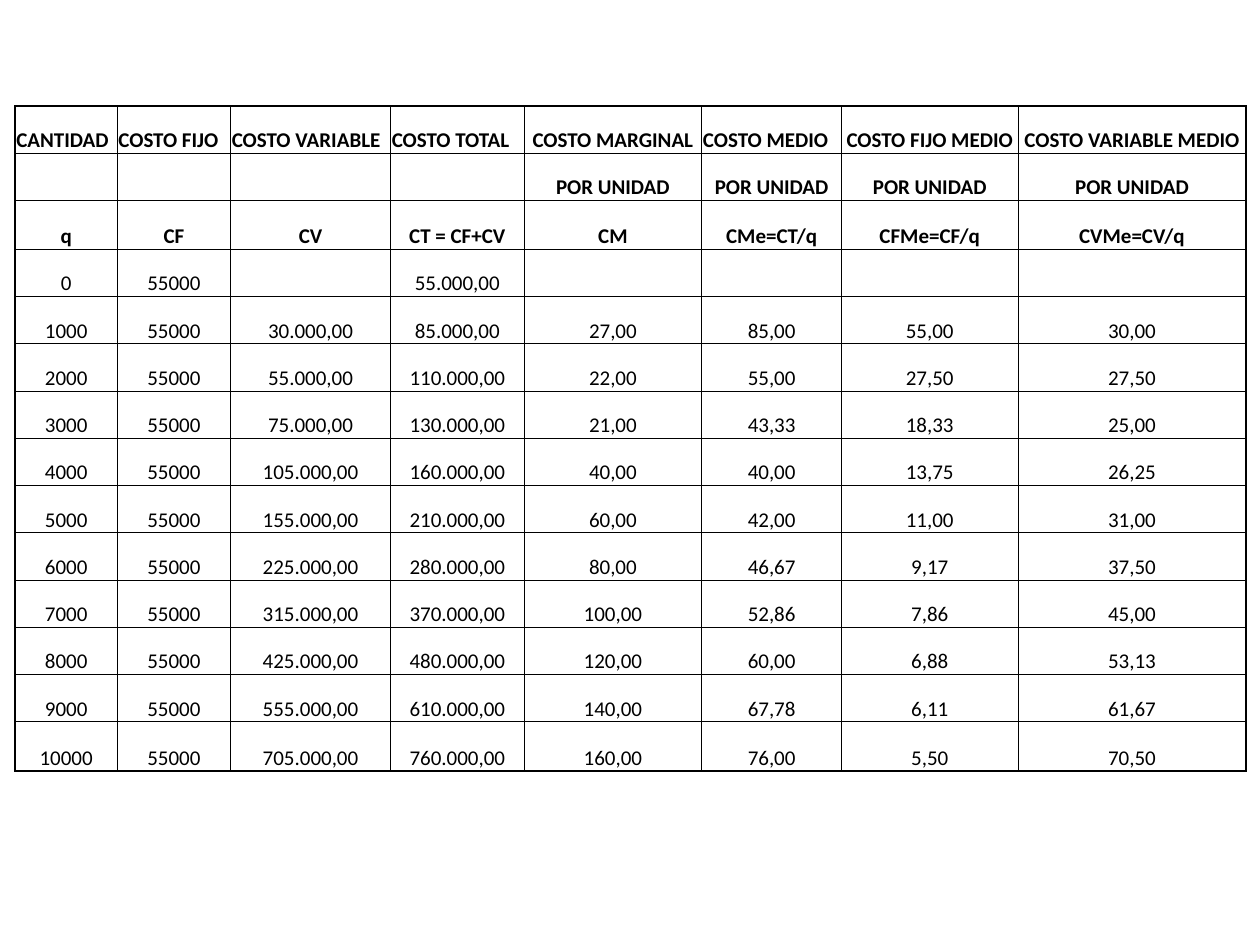
from lxml.etree import SubElement
from pptx import Presentation
from pptx.dml.color import RGBColor
from pptx.enum.text import MSO_ANCHOR, PP_ALIGN
from pptx.oxml.ns import qn
from pptx.util import Inches, Pt

INK = "000000"
THIN, THICK = 0.5, 1
HEADS = 3
rows = [
    ["CANTIDAD", "COSTO FIJO", "COSTO VARIABLE", "COSTO TOTAL", "COSTO MARGINAL",
     "COSTO MEDIO", "COSTO FIJO MEDIO", "COSTO VARIABLE MEDIO"],
    [""] * 4 + ["POR UNIDAD"] * 4,
    ["q", "CF", "CV", "CT = CF+CV", "CM", "CMe=CT/q", "CFMe=CF/q", "CVMe=CV/q"],
    ["0", "55000", "", "55.000,00", "", "", "", ""],
    ["1000", "55000", "30.000,00", "85.000,00", "27,00", "85,00", "55,00", "30,00"],
    ["2000", "55000", "55.000,00", "110.000,00", "22,00", "55,00", "27,50", "27,50"],
    ["3000", "55000", "75.000,00", "130.000,00", "21,00", "43,33", "18,33", "25,00"],
    ["4000", "55000", "105.000,00", "160.000,00", "40,00", "40,00", "13,75", "26,25"],
    ["5000", "55000", "155.000,00", "210.000,00", "60,00", "42,00", "11,00", "31,00"],
    ["6000", "55000", "225.000,00", "280.000,00", "80,00", "46,67", "9,17", "37,50"],
    ["7000", "55000", "315.000,00", "370.000,00", "100,00", "52,86", "7,86", "45,00"],
    ["8000", "55000", "425.000,00", "480.000,00", "120,00", "60,00", "6,88", "53,13"],
    ["9000", "55000", "555.000,00", "610.000,00", "140,00", "67,78", "6,11", "61,67"],
    ["10000", "55000", "705.000,00", "760.000,00", "160,00", "76,00", "5,50", "70,50"],
]
widths = [0.81, 0.9, 1.27, 1.06, 1.41, 1.11, 1.4, 1.81]
last_row, last_col = len(rows) - 1, len(widths) - 1
tall_rows = (HEADS - 1, last_row)
left_heads = (0, 1, 2, 3, 5)
height, tall = 5.28, 0.39
short = (height - tall * len(tall_rows)) / (len(rows) - len(tall_rows))


def color(code):
    return RGBColor.from_string(code)


def add_border(cell, side, width):
    line = SubElement(cell._tc.get_or_add_tcPr(), qn("a:ln" + side), w=str(Pt(width)))
    fill = SubElement(line, qn("a:solidFill"))
    SubElement(fill, qn("a:srgbClr"), val=INK)


deck = Presentation()
deck.slide_width, deck.slide_height = Inches(10), Inches(7.5)
slide = deck.slides.add_slide(deck.slide_layouts[6])
frame = slide.shapes.add_table(
    len(rows), len(widths), Inches(0.12), Inches(0.84), Inches(sum(widths)), Inches(height))
table = frame.table
table.first_row = table.horz_banding = False
for col, width in enumerate(widths):
    table.columns[col].width = Inches(width)

layout = {
    "vertical_anchor": MSO_ANCHOR.BOTTOM,
    "margin_left": Inches(0.01), "margin_right": Inches(0.01),
    "margin_top": Inches(0.01), "margin_bottom": 0,
}
for row, texts in enumerate(rows):
    table.rows[row].height = Inches(tall if row in tall_rows else short)
    for col, text in enumerate(texts):
        cell = table.cell(row, col)
        for name, value in layout.items():
            setattr(cell, name, value)
        thick = {
            "L": col == 0, "R": col == last_col,
            "T": row in (0, HEADS), "B": row in tall_rows,
        }
        for side, strong in thick.items():
            add_border(cell, side, THICK if strong else THIN)
        cell.fill.background()
        if not text:
            continue
        para = cell.text_frame.paragraphs[0]
        at_left = row == 0 and col in left_heads
        para.alignment = PP_ALIGN.LEFT if at_left else PP_ALIGN.CENTER
        run = para.add_run()
        run.text = text
        style = {"name": "Calibri", "size": Pt(12), "bold": row < HEADS}
        for name, value in style.items():
            setattr(run.font, name, value)
        run.font.color.rgb = color(INK)

deck.save("out.pptx")
